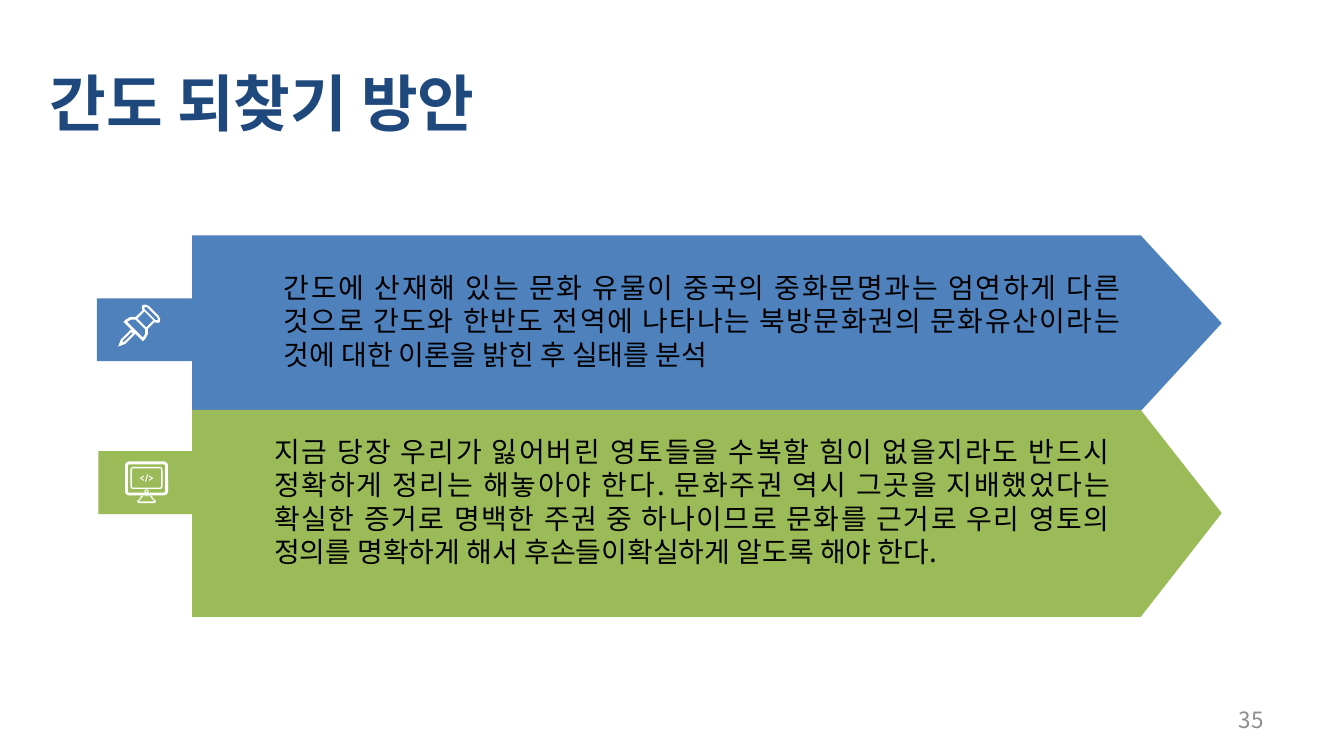
from pptx import Presentation
from pptx import util as u
from pptx.dml.color import RGBColor
from pptx.enum import shapes, text
from pptx.oxml.ns import qn
from pptx.util import Cm, Pt

COLORS = {
    "title": "1F497D",
    "blue": "4F81BD",
    "green": "9BBB59",
    "icon": "FFFFFF",
    "body": "000000",
    "number": "8C8C8C",
}
BODY_FONT = "Noto Sans CJK KR"
ARROW_LEFT, ARROW_SHOULDER, ARROW_TIP = 3.63, 21.56, 23.09

# Upright pin around its centre, right half only, in hundredths of a centimetre.
PIN_HALVES = [
    [(13, -48), (19, -46), (23, -41), (21, -37), (16, -34), (16, -16),
     (23, -9), (26, 0), (26, 7), (6, 7), (6, 34), (0, 47)],
    [(14, -44), (18, -41), (14, -38)],
    [(12, -35), (12, -16)],
    [(13, -12), (19, -6), (21, 2)],
    [(2, 10), (2, 34)],
]

BANDS = [
    {
        "color": "blue", "top": 4.45, "bottom": 7.77,
        "tab": (1.83, 5.64), "text_box": (5.11, 4.98, 16.33, 2.69),
        "text": "간도에 산재해 있는 문화 유물이 중국의 중화문명과는 엄연하게 다른 "
                "것으로 간도와 한반도 전역에 나타나는 북방문화권의 문화유산이라는 "
                "것에 대한 이론을 밝힌 후 실태를 분석",
    },
    {
        "color": "green", "top": 7.75, "bottom": 11.66,
        "tab": (1.86, 8.53), "text_box": (4.93, 8.08, 16.31, 3.4),
        "text": "지금 당장 우리가 잃어버린 영토들을 수복할 힘이 없을지라도 반드시 "
                "정확하게 정리는 해놓아야 한다. 문화주권 역시 그곳을 지배했었다는 "
                "확실한 증거로 명백한 주권 중 하나이므로 문화를 근거로 우리 영토의 "
                "정의를 명확하게 해서 후손들이확실하게 알도록 해야 한다.",
    },
]


def rgb(name):
    return RGBColor.from_string(COLORS[name])


def paint(shape, color):
    shape.shadow.inherit = False
    shape.fill.solid()
    shape.fill.fore_color.rgb = rgb(color)
    shape.line.fill.background()
    return shape


def add_preset(slide, kind, box, color):
    return paint(slide.shapes.add_shape(kind, *map(Cm, box)), color)


def add_outline(slide, contours, color, origin=(0, 0)):
    """Fill closed contours given in hundredths of a centimetre from origin."""
    builder = slide.shapes.build_freeform(*contours[0][0], scale=Cm(0.01))
    for index, (start, *rest) in enumerate(contours):
        if index:
            builder.move_to(*start)
        builder.add_line_segments(rest, close=True)
    return paint(builder.convert_to_shape(*map(Cm, origin)), color)


def add_frame(slide, box, width, rounding):
    frame = add_preset(slide, shapes.MSO_SHAPE.ROUNDED_RECTANGLE, box, "icon")
    frame.adjustments[0] = rounding
    frame.fill.background()
    frame.line.color.rgb = rgb("icon")
    frame.line.width = Pt(width)


def format_runs(paragraph, font, size, color, bold=False):
    for run in paragraph.runs:
        run.font.name = font
        run.font.size = Pt(size)
        run.font.bold = bold
        run.font.color.rgb = rgb(color)
        if font == BODY_FONT:
            east_asian = run.font._element.makeelement(qn("a:ea"), {"typeface": font})
            run.font._element.find(qn("a:latin")).addnext(east_asian)


def add_text(slide, box, words, size, color, align, anchor=text.MSO_ANCHOR.TOP):
    frame = slide.shapes.add_textbox(*map(Cm, box)).text_frame
    frame.word_wrap = True
    frame.vertical_anchor = anchor
    frame.text = words
    paragraph = frame.paragraphs[0]
    paragraph.alignment = align
    paragraph.line_spacing = Pt(size * 1.2)
    format_runs(paragraph, BODY_FONT, size, color)


def set_title(slide, words):
    title = slide.shapes.title
    title.left, title.top, title.width, title.height = map(Cm, (0.76, 1.12, 11.73, 1.6))
    frame = title.text_frame
    frame.text = words
    frame.auto_size = text.MSO_AUTO_SIZE.NONE
    frame.vertical_anchor = text.MSO_ANCHOR.TOP
    frame.margin_left = frame.margin_right = Cm(0.18)
    frame.margin_top = frame.margin_bottom = Cm(0.1)
    frame.paragraphs[0].alignment = text.PP_ALIGN.LEFT
    format_runs(frame.paragraphs[0], "Arial", 33, "title", bold=True)


def add_band(slide, band):
    top, bottom = band["top"], band["bottom"]
    corners = [(ARROW_LEFT, top), (ARROW_SHOULDER, top), (ARROW_TIP, (top + bottom) / 2),
               (ARROW_SHOULDER, bottom), (ARROW_LEFT, bottom)]
    left, tab_top = band["tab"]
    add_preset(slide, shapes.MSO_SHAPE.RECTANGLE,
               (left, tab_top, ARROW_LEFT - left, 1.19), band["color"])
    add_outline(slide, [[(x * 100, y * 100) for x, y in corners]], band["color"])
    add_text(slide, band["text_box"], band["text"], 15, "body", text.PP_ALIGN.JUSTIFY)


def add_pin_icon(slide, center):
    contours = [half + [(-x, y) for x, y in reversed(half)] for half in PIN_HALVES]
    add_outline(slide, contours, "icon", center).rotation = 45


def add_code_monitor_icon(slide, center):
    x, y = center
    add_frame(slide, (x - 0.38, y - 0.3, 0.76, 0.59), 1.5, 0.09)
    add_frame(slide, (x - 0.29, y - 0.21, 0.58, 0.39), 0.75, 0.09)
    stand = [(-10, 32), (10, 32), (13, 38), (18, 42), (16, 46),
             (-16, 46), (-18, 42), (-13, 38)]
    opening = [(-7, 33), (7, 33), (10, 38), (15, 42), (14, 43),
               (-14, 43), (-15, 42), (-10, 38)]
    add_outline(slide, [stand, opening], "icon", center)
    add_preset(slide, shapes.MSO_SHAPE.DONUT, (x - 0.04, y + 0.2, 0.08, 0.08), "icon")
    bracket = [(-13, -1), (-5, -6), (-5, -4), (-10, -1), (-5, 2), (-5, 4)]
    add_outline(slide, [bracket], "icon", center)
    add_outline(slide, [[(-px, py) for px, py in bracket]], "icon", center)
    add_outline(slide, [[(1, -8), (3, -8), (-1, 6), (-3, 6)]], "icon", center)


def main():
    deck = Presentation()
    deck.slide_width, deck.slide_height = u.Cm(25.4), u.Cm(14.29)
    slide = deck.slides.add_slide(deck.slide_layouts[5])
    set_title(slide, "간도 되찾기 방안")
    for band in BANDS:
        add_band(slide, band)
    add_pin_icon(slide, (2.57, 6.22))
    add_code_monitor_icon(slide, (2.77, 9.05))
    add_text(slide, (18.21, 13.23, 5.92, 0.76), "35", 12, "number",
             text.PP_ALIGN.RIGHT, text.MSO_ANCHOR.MIDDLE)
    deck.save("out.pptx")


if __name__ == "__main__":
    main()
